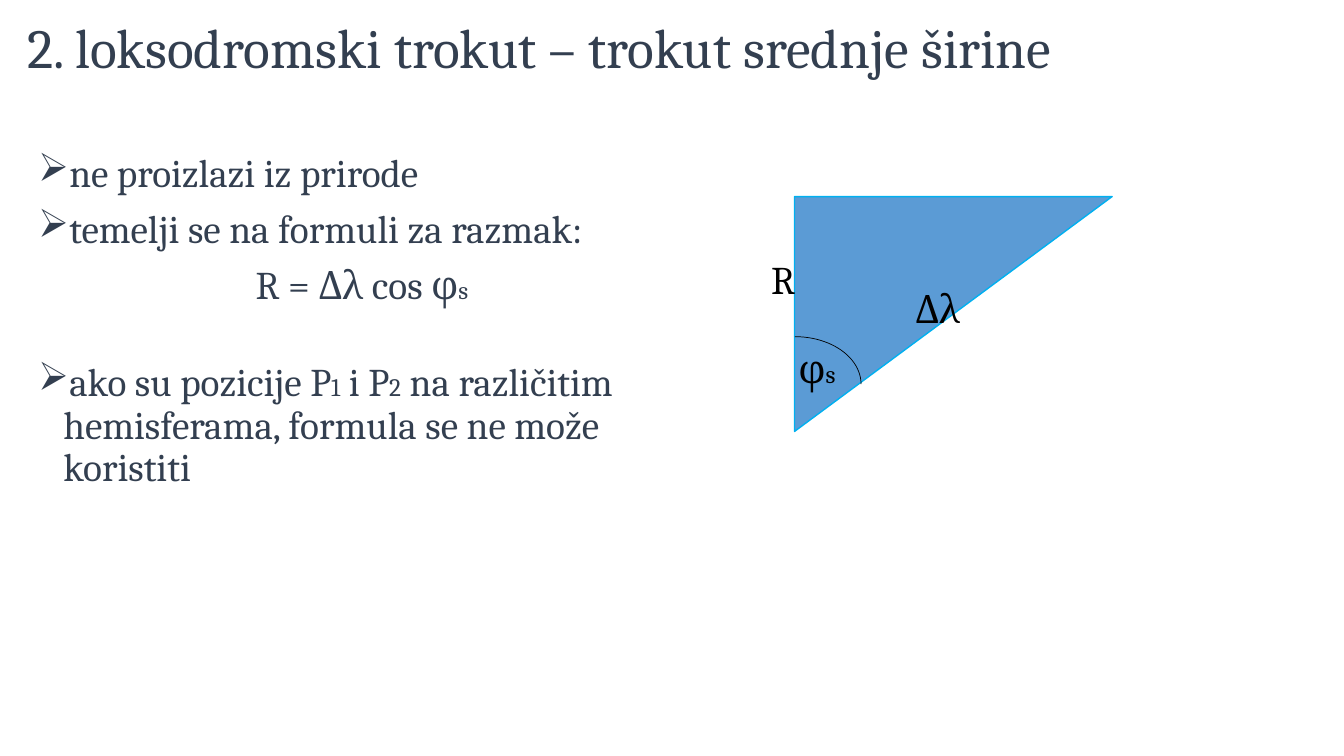
from dataclasses import dataclass
from typing import Any

import lxml.etree
import pptx
import pptx.dml.color
import pptx.enum.shapes
import pptx.enum.text
import pptx.oxml.ns
import pptx.util

Inches = pptx.util.Inches
Pt = pptx.util.Pt
RGBColor = pptx.dml.color.RGBColor
Align = pptx.enum.text.PP_ALIGN
Anchor = pptx.enum.text.MSO_ANCHOR
AutoSize = pptx.enum.text.MSO_AUTO_SIZE
Preset = pptx.enum.shapes.MSO_SHAPE
qn = pptx.oxml.ns.qn

SLATE = RGBColor(0x33, 0x3F, 0x50)
BLACK = RGBColor(0x00, 0x00, 0x00)
BLUE = RGBColor(0x5B, 0x9B, 0xD5)
CYAN = RGBColor(0x00, 0xB0, 0xF0)
FONT = "Cambria"
BODY_SIZE = 28
INDEX_SIZE = 18


@dataclass(frozen=True)
class Run:
    text: str
    size: float = BODY_SIZE


@dataclass(frozen=True)
class Line:
    runs: tuple[Run, ...]
    bullet: bool = False
    align: Align = Align.LEFT
    before: float = 0
    spacing: float = 1.0


@dataclass(frozen=True)
class Box:
    left: float
    top: float
    width: float
    height: float

    def lengths(self) -> tuple[int, ...]:
        return tuple(Inches(v) for v in (self.left, self.top, self.width, self.height))


@dataclass(frozen=True)
class Label:
    box: Box
    runs: tuple[Run, ...]


@dataclass(frozen=True)
class Figure:
    preset: Preset
    box: Box
    line_color: RGBColor
    line_width: float
    fill: RGBColor | None = None
    upside_down: bool = False


TITLE = Line((Run("2. loksodromski trokut – trokut srednje širine", 39.6),), spacing=0.9)
STATEMENTS = (
    Line((Run("ne proizlazi iz prirode"),), bullet=True, spacing=0.9),
    Line((Run("temelji se na formuli za razmak:"),), bullet=True, before=10, spacing=0.9),
    Line((Run("R = Δλ cos φ"), Run("s", INDEX_SIZE)), align=Align.CENTER, before=10, spacing=0.9),
    Line(
        (
            Run("ako su pozicije P"),
            Run("1", INDEX_SIZE),
            Run(" i P"),
            Run("2", INDEX_SIZE),
            Run(" na različitim hemisferama, formula se ne može koristiti"),
        ),
        bullet=True,
        before=39,
        spacing=0.9,
    ),
)
TRIANGLE = Figure(Preset.RIGHT_TRIANGLE, Box(7.88, 1.95, 3.15, 2.33), CYAN, 1, BLUE, True)
ANGLE_ARC = Figure(Preset.ARC, Box(7.23, 3.34, 1.31, 0.94), BLACK, 0.5)
DEPARTURE = Label(Box(7.55, 2.48, 0.55, 0.65), (Run("R"),))
LONGITUDE = Label(Box(8.98, 2.77, 0.97, 0.57), (Run("Δλ"),))
MEAN_LATITUDE = Label(Box(7.82, 3.37, 0.97, 0.57), (Run("φ"), Run("s", INDEX_SIZE)))
DIAGRAM = (TRIANGLE, DEPARTURE, LONGITUDE, ANGLE_ARC, MEAN_LATITUDE)


def add_bullet(paragraph: Any) -> None:
    properties = paragraph._p.get_or_add_pPr()
    properties.set("marL", str(Inches(0.25)))
    properties.set("indent", str(Inches(-0.25)))
    lxml.etree.SubElement(properties, qn("a:buChar")).set("char", "➢")


def add_text(
    shapes: Any,
    box: Box,
    lines: tuple[Line, ...],
    *,
    color: RGBColor,
    anchor: Anchor = Anchor.TOP,
    auto_size: AutoSize = AutoSize.NONE,
) -> None:
    frame = shapes.add_textbox(*box.lengths()).text_frame
    frame.word_wrap = True
    frame.auto_size = auto_size
    frame.vertical_anchor = anchor
    for number, line in enumerate(lines):
        paragraph = frame.add_paragraph() if number else frame.paragraphs[0]
        if line.bullet:
            add_bullet(paragraph)
        paragraph.alignment = line.align
        paragraph.line_spacing = line.spacing
        paragraph.space_before = Pt(line.before)
        for part in line.runs:
            run = paragraph.add_run()
            run.text = part.text
            run.font.name = FONT
            run.font.size = Pt(part.size)
            run.font.color.rgb = color


def add_figure(shapes: Any, figure: Figure) -> None:
    shape = shapes.add_shape(figure.preset, *figure.box.lengths())
    shape.shadow.inherit = False
    shape.line.color.rgb = figure.line_color
    shape.line.width = Pt(figure.line_width)
    if figure.fill is None:
        shape.fill.background()
    else:
        shape.fill.solid()
        shape.fill.fore_color.rgb = figure.fill
    if figure.upside_down:
        shape.rotation = 180
        shape.element.spPr.find(qn("a:xfrm")).set("flipH", "1")


def main() -> None:
    presentation = pptx.Presentation()
    presentation.slide_width = Inches(13.33)
    presentation.slide_height = Inches(7.5)
    slide = presentation.slides.add_slide(presentation.slide_layouts[6])

    add_text(slide.shapes, Box(0.17, 0.17, 12.21, 0.67), (TITLE,), color=SLATE, anchor=Anchor.MIDDLE)
    add_text(slide.shapes, Box(0.28, 1.47, 6.62, 4.78), STATEMENTS, color=SLATE)

    diagram = slide.shapes.add_group_shape().shapes
    for part in DIAGRAM:
        if isinstance(part, Figure):
            add_figure(diagram, part)
        else:
            add_text(
                diagram,
                part.box,
                (Line(part.runs),),
                color=BLACK,
                auto_size=AutoSize.SHAPE_TO_FIT_TEXT,
            )

    presentation.save("out.pptx")


if __name__ == "__main__":
    main()
